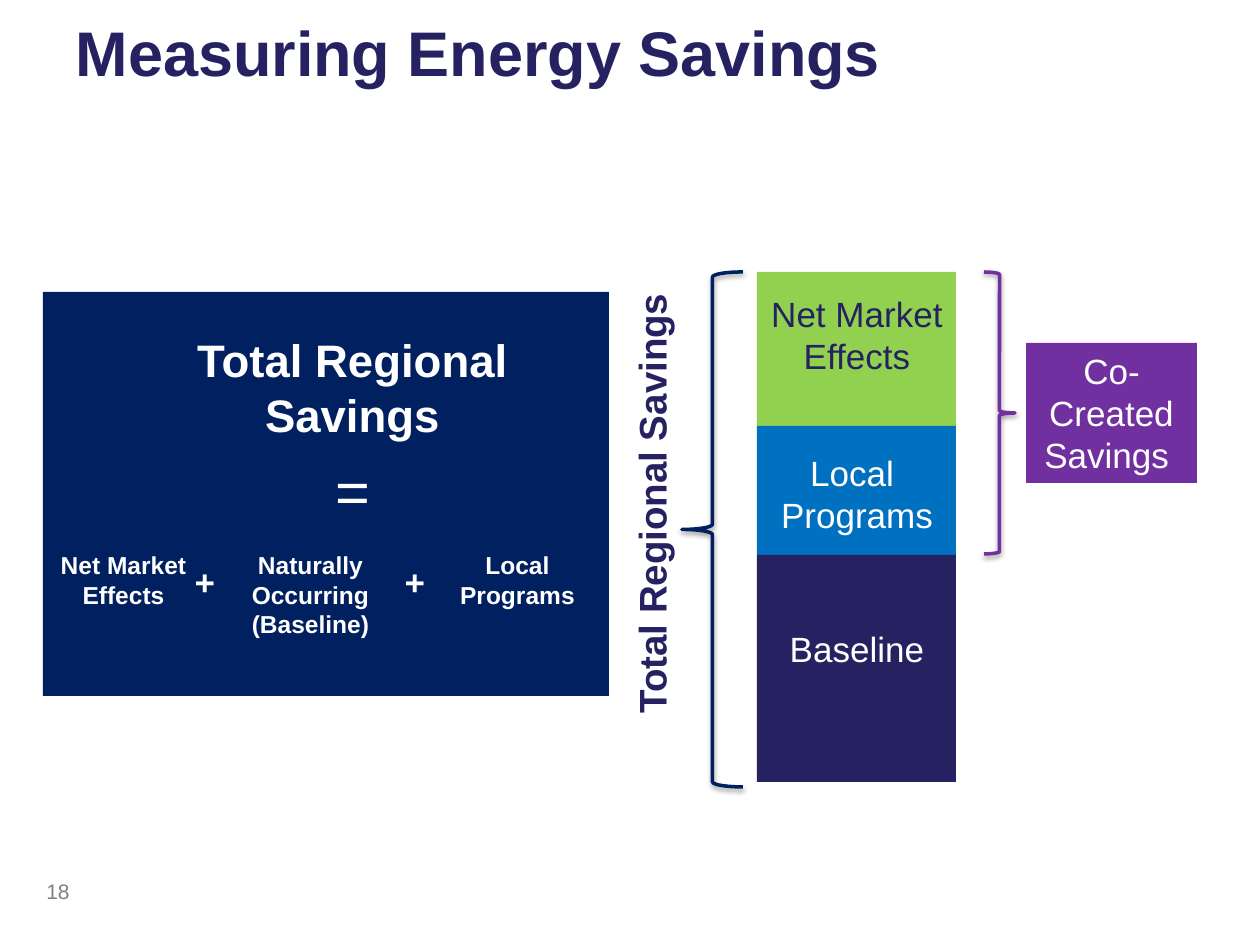
from lxml.etree import SubElement
from pptx import Presentation
from pptx.dml.color import RGBColor
from pptx.enum.shapes import MSO_SHAPE
from pptx.enum.text import MSO_ANCHOR, PP_ALIGN
from pptx.oxml.ns import qn
from pptx.util import Pt

PX = 914400 / 126
COLORS = {
    "ink": "262262", "navy": "002060", "green": "92D050", "blue": "0070C0",
    "purple": "7030A0", "white": "FFFFFF", "gray": "808080", "black": "000000",
}


def px(value):
    """Turn pixels into EMU."""
    return round(value * PX)


def color(name):
    """Look up a palette colour."""
    return RGBColor.from_string(COLORS[name])


def write(paragraph, text, size, ink, bold=False, align=PP_ALIGN.CENTER):
    """Add text as styled runs, with a line break at each newline."""
    paragraph.alignment = align
    for number, line in enumerate(text.split("\n")):
        if number:
            paragraph.add_line_break()
        run = paragraph.add_run()
        run.text = line
        run.font.name = "Arial"
        run.font.size = Pt(size)
        run.font.bold = bold
        run.font.color.rgb = color(ink)


def add_label(slide, box, lines, ink, indent=0, align=PP_ALIGN.CENTER):
    """Add a wrapped text box of (text, size, bold, space before) lines."""
    label = slide.shapes.add_textbox(*map(px, box))
    frame = label.text_frame
    frame.word_wrap = True
    for number, (text, size, bold, before) in enumerate(lines):
        paragraph = frame.add_paragraph() if number else frame.paragraphs[0]
        if indent:
            properties = paragraph._p.get_or_add_pPr()
            properties.set("marL", str(px(indent)))
            properties.set("indent", "0")
        if before:
            paragraph.space_before = Pt(before)
        write(paragraph, text, size, ink, bold, align)
    return label


def add_block(slide, box, fill):
    """Add a flat filled rectangle."""
    block = slide.shapes.add_shape(MSO_SHAPE.RECTANGLE, *map(px, box))
    block.shadow.inherit = False
    block.fill.solid()
    block.fill.fore_color.rgb = color(fill)
    block.line.fill.background()
    return block


def add_brace(slide, kind, box, ink):
    """Add a brace with a soft shadow below it."""
    brace = slide.shapes.add_shape(kind, *map(px, box))
    brace.shadow.inherit = False
    brace.fill.background()
    brace.line.color.rgb = color(ink)
    brace.line.width = Pt(2)
    effects = brace._element.spPr.find(qn("a:effectLst"))
    shadow = SubElement(effects, qn("a:outerShdw"), blurRad=str(Pt(3.1)),
                        dist=str(Pt(1.6)), dir="5400000", rotWithShape="0")
    tint = SubElement(shadow, qn("a:srgbClr"), val=COLORS["black"])
    SubElement(tint, qn("a:alpha"), val="38000")


def set_title(slide, box, text):
    """Place and format the title placeholder."""
    title = slide.shapes.title
    title.left, title.top, title.width, title.height = map(px, box)
    frame = title.text_frame
    frame.vertical_anchor = MSO_ANCHOR.MIDDLE
    frame.margin_right = 0
    write(frame.paragraphs[0], text, 36, "ink", True, PP_ALIGN.LEFT)


def add_equation(slide, box):
    """Add the panel that spells out the sum of savings."""
    left, top, width, height = box
    add_block(slide, box, "navy")
    add_label(slide, (left + 107, top + 34, 389, 214),
              [("Total Regional Savings", 26, True, 0), ("=", 34, False, 7)],
              "white", 16)
    terms = [
        (-27, ["Net Market Effects"]),
        (160, ["Naturally Occurring", "(Baseline)"]),
        (367, ["Local Programs"]),
    ]
    for offset, lines in terms:
        add_label(slide, (left + offset, top + 252, 199, 72),
                  [(line, 14, True, 0) for line in lines], "white", 16)
    for offset in (96, 306):
        add_label(slide, (left + offset, top + 262, 116, 98),
                  [("+", 20, True, 0)], "white", 16)


def add_savings_stack(slide, box):
    """Add the stacked savings bar with its braces and captions."""
    left, top, width, height = box
    segments = [
        ("Net Market Effects", 154, "green", "ink", 14),
        ("Local \nPrograms", 129, "blue", "white", 19),
        ("Baseline", 227, "ink", "white", 66),
    ]
    segment_top = top
    for text, segment_height, fill, ink, offset in segments:
        add_block(slide, (left, segment_top, width, segment_height), fill)
        add_label(slide, (left + 1, segment_top + offset, width - 1, 97),
                  [(text, 20, False, 0)], ink)
        segment_top += segment_height

    total = add_label(slide, (left - 375, top + 202, 539, 59),
                      [("Total Regional Savings", 22, True, 0)], "ink")
    total.rotation = 270
    add_brace(slide, MSO_SHAPE.LEFT_BRACE, (left - 75, top, 61, 515), "navy")
    add_brace(slide, MSO_SHAPE.RIGHT_BRACE, (left + 227, top, 31, 282), "purple")

    shared = add_block(slide, (left + 269, top + 71, 171, 140), "purple")
    frame = shared.text_frame
    frame.word_wrap = True
    frame.vertical_anchor = MSO_ANCHOR.MIDDLE
    write(frame.paragraphs[0], "Co-Created Savings ", 20, "white")


def main():
    """Build and save the slide."""
    deck = Presentation()
    deck.slide_width, deck.slide_height = px(1260), px(945)
    slide = deck.slides.add_slide(deck.slide_layouts[5])
    set_title(slide, (63, 0, 1154, 103), "Measuring Energy Savings")
    add_equation(slide, (43, 292, 566, 404))
    add_savings_stack(slide, (757, 272, 199, 510))
    add_label(slide, (34, 872, 262, 42), [("18", 12, False, 0)], "gray",
              align=PP_ALIGN.LEFT)
    deck.save("out.pptx")


if __name__ == "__main__":
    main()
